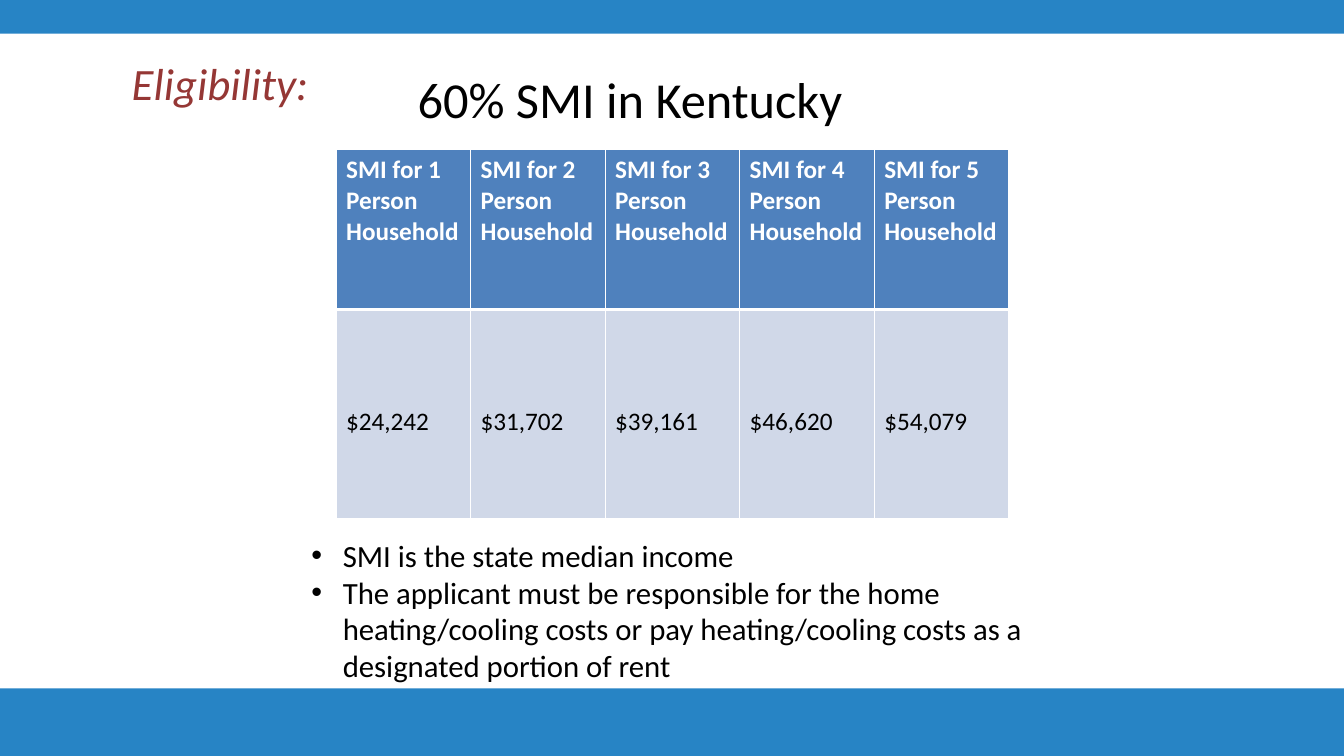
"""Build the Kentucky income eligibility slide."""
from dataclasses import dataclass

from lxml.etree import SubElement
from pptx import Presentation
from pptx.dml.color import RGBColor
from pptx.enum.shapes import MSO_SHAPE
from pptx.enum.text import MSO_ANCHOR, PP_ALIGN
from pptx.oxml.ns import qn
from pptx.slide import Slide
from pptx.table import _Cell
from pptx.text.text import Font, TextFrame, _Paragraph
from pptx.util import Cm, Pt

SLIDE_WIDTH, SLIDE_HEIGHT = 33.87, 19.05
COLUMN_WIDTH = 3.39
BLUE, WHITE, BLACK = "2784C5", "FFFFFF", "000000"


@dataclass(frozen=True)
class Area:
    left: float
    top: float
    width: float
    height: float

    def lengths(self) -> tuple[Cm, Cm, Cm, Cm]:
        return Cm(self.left), Cm(self.top), Cm(self.width), Cm(self.height)


@dataclass(frozen=True)
class TextStyle:
    size: int
    color: str = BLACK
    bold: bool = False
    italic: bool = False


@dataclass(frozen=True)
class TextBlock:
    area: Area
    lines: tuple[str, ...]
    style: TextStyle
    anchor: MSO_ANCHOR = MSO_ANCHOR.MIDDLE
    alignment: PP_ALIGN = PP_ALIGN.LEFT
    bulleted: bool = False


@dataclass(frozen=True)
class RowStyle:
    height: float
    fill: str
    text: TextStyle
    margin_top: float
    top_border: int
    bottom_border: int


BANDS = (Area(0, 0, SLIDE_WIDTH, 0.85), Area(0, 17.35, SLIDE_WIDTH, 1.7))
BLOCKS = (
    TextBlock(Area(4.45, 0.89, 22.86, 3.18), ("60% SMI in Kentucky",),
              TextStyle(36), alignment=PP_ALIGN.CENTER),
    TextBlock(Area(3.07, 0.76, 25.27, 2.62), ("Eligibility:",),
              TextStyle(32, "953735", italic=True)),
    TextBlock(Area(7.6, 13.39, 20.57, 4.01),
              ("SMI is the state median income",
               "The applicant must be responsible for the home heating/cooling costs "
               "or pay heating/cooling costs as a designated portion of rent"),
              TextStyle(22), anchor=MSO_ANCHOR.TOP, bulleted=True),
)
AMOUNTS = ("$24,242", "$31,702", "$39,161", "$46,620", "$54,079")
HEADINGS = tuple(f"SMI for {size} Person Household" for size in range(1, len(AMOUNTS) + 1))
HEADER = RowStyle(4.03, "4F81BD", TextStyle(18, WHITE, bold=True), 0.13, 1, 3)
BODY = RowStyle(5.27, "D0D8E8", TextStyle(18), 2.45, 3, 1)


def rgb(value: str) -> RGBColor:
    return RGBColor.from_string(value)


def style_font(font: Font, style: TextStyle) -> None:
    font.name = "Calibri"
    font.size = Pt(style.size)
    font.bold = style.bold
    font.italic = style.italic
    font.color.rgb = rgb(style.color)


def style_runs(frame: TextFrame, style: TextStyle) -> None:
    for para in frame.paragraphs:
        for span in para.runs:
            style_font(span.font, style)


def add_bullet(para: _Paragraph) -> None:
    properties = para._p.get_or_add_pPr()
    properties.set("marL", str(Cm(0.79)))
    properties.set("indent", str(Cm(-0.79)))
    SubElement(properties, qn("a:buFont"), typeface="Arial")
    SubElement(properties, qn("a:buChar"), char="•")


def draw_band(page: Slide, area: Area) -> None:
    band = page.shapes.add_shape(MSO_SHAPE.RECTANGLE, *area.lengths())
    band.shadow.inherit = False
    band.fill.solid()
    band.fill.fore_color.rgb = rgb(BLUE)
    band.line.fill.background()


def draw_text(page: Slide, block: TextBlock) -> None:
    frame = page.shapes.add_textbox(*block.area.lengths()).text_frame
    frame.word_wrap = True
    frame.vertical_anchor = block.anchor
    frame.text = "\n".join(block.lines)
    for para in frame.paragraphs:
        para.alignment = block.alignment
        if block.bulleted:
            add_bullet(para)
    style_runs(frame, block.style)


def add_borders(cell: _Cell, style: RowStyle) -> None:
    properties = cell._tc.get_or_add_tcPr()
    sides = {"L": 1, "R": 1, "T": style.top_border, "B": style.bottom_border}
    for side, width in sides.items():
        line = SubElement(properties, qn(f"a:ln{side}"), w=str(Pt(width)))
        fill = SubElement(line, qn("a:solidFill"))
        SubElement(fill, qn("a:srgbClr"), val=WHITE)


def fill_cell(cell: _Cell, text: str, style: RowStyle) -> None:
    cell.text_frame.text = text
    cell.margin_top = Cm(style.margin_top)
    style_runs(cell.text_frame, style.text)
    add_borders(cell, style)
    cell.fill.solid()
    cell.fill.fore_color.rgb = rgb(style.fill)


def draw_income_table(page: Slide) -> None:
    rows = ((HEADINGS, HEADER), (AMOUNTS, BODY))
    area = Area(8.47, 3.77, COLUMN_WIDTH * len(AMOUNTS), HEADER.height + BODY.height)
    table = page.shapes.add_table(len(rows), len(AMOUNTS), *area.lengths()).table
    for column in table.columns:
        column.width = Cm(COLUMN_WIDTH)
    for row, (texts, style) in zip(table.rows, rows):
        row.height = Cm(style.height)
        for cell, text in zip(row.cells, texts):
            fill_cell(cell, text, style)


def main() -> None:
    deck = Presentation()
    deck.slide_width, deck.slide_height = Cm(SLIDE_WIDTH), Cm(SLIDE_HEIGHT)
    page = deck.slides.add_slide(deck.slide_layouts[6])
    for area in BANDS:
        draw_band(page, area)
    draw_income_table(page)
    for block in BLOCKS:
        draw_text(page, block)
    deck.save("out.pptx")


if __name__ == "__main__":
    main()
